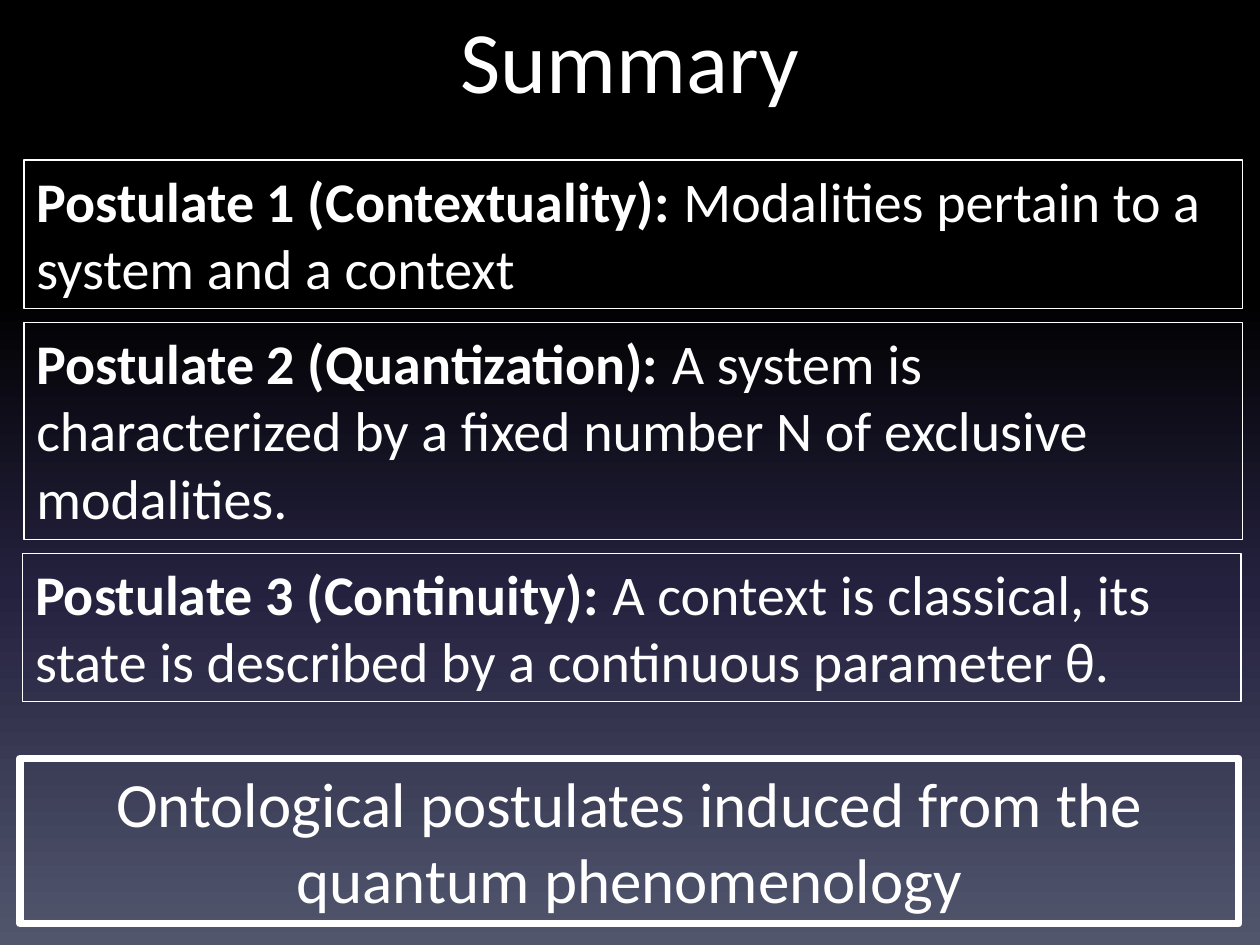
from lxml import etree
from pptx import Presentation
from pptx.dml.color import RGBColor
from pptx.enum.shapes import MSO_SHAPE
from pptx.enum.text import MSO_ANCHOR, MSO_AUTO_SIZE, PP_ALIGN
from pptx.oxml.ns import qn
from pptx.util import Inches, Pt

RECTANGLE = MSO_SHAPE.RECTANGLE
TOP, MIDDLE = MSO_ANCHOR.TOP, MSO_ANCHOR.MIDDLE
LEFT, CENTER = PP_ALIGN.LEFT, PP_ALIGN.CENTER
FIT_SHAPE, NO_FIT = MSO_AUTO_SIZE.SHAPE_TO_FIT_TEXT, MSO_AUTO_SIZE.NONE

WHITE = RGBColor(0xFF, 0xFF, 0xFF)
BLACK = RGBColor(0x00, 0x00, 0x00)
INDIGO = RGBColor(0x24, 0x21, 0x3E)
SLATE = RGBColor(0x51, 0x56, 0x6D)
FONT = "Calibri"

# Content
TITLE = "Summary"
POSTULATES = [  # left, top, height, name, statement
    (0.19, 1.27, 1.18, "Postulate 1 (Contextuality): ",
     "Modalities pertain to a system and a context"),
    (0.19, 2.56, 1.72, "Postulate 2 (Quantization): ",
     "A system is characterized by a fixed number N of exclusive modalities."),
    (0.18, 4.39, 1.18, "Postulate 3 (Continuity): ",
     "A context is classical, its state is described by a continuous parameter θ."),
]
CONCLUSION = "Ontological postulates induced from the quantum phenomenology"
BACKDROP = [(0, BLACK), (31, BLACK), (62, INDIGO), (100, SLATE)]
BOX_WIDTH = 9.67


def add_run(paragraph, text, size, bold=False):
    run = paragraph.add_run()
    run.text = text
    run.font.name = FONT
    run.font.size = Pt(size)
    run.font.bold = bold
    run.font.color.rgb = WHITE


def add_box(slide, left, top, height, line_width, runs, size, align):
    box = slide.shapes.add_shape(RECTANGLE, Inches(left), Inches(top),
                                 Inches(BOX_WIDTH), Inches(height))
    box.shadow.inherit = False
    box.fill.background()
    box.line.color.rgb = WHITE
    box.line.width = Pt(line_width)
    frame = box.text_frame
    frame.word_wrap = True
    frame.auto_size = FIT_SHAPE
    frame.vertical_anchor = TOP
    paragraph = frame.paragraphs[0]
    paragraph.alignment = align
    for text, bold in runs:
        add_run(paragraph, text, size, bold)


def paint_backdrop(slide):
    fill = slide.background.fill
    fill.gradient()
    fill.gradient_angle = 270  # counter-clockwise: runs from top to bottom
    stops = slide.element.find(".//" + qn("a:gsLst"))
    for stop in list(stops):
        stops.remove(stop)
    for percent, color in BACKDROP:
        stop = etree.SubElement(stops, qn("a:gs"), pos=str(percent * 1000))
        etree.SubElement(stop, qn("a:srgbClr"), val=str(color))


def main():
    deck = Presentation()
    deck.slide_width, deck.slide_height = Inches(10), Inches(7.5)
    slide = deck.slides.add_slide(deck.slide_layouts[5])
    paint_backdrop(slide)

    # Title
    title = slide.shapes.title
    title.left, title.top = Inches(0.5), Inches(0)
    title.width, title.height = Inches(9), Inches(1.25)
    title.text_frame.auto_size = NO_FIT
    title.text_frame.vertical_anchor = TOP
    heading = title.text_frame.paragraphs[0]
    heading.alignment = CENTER
    add_run(heading, TITLE, 50)

    # Postulates
    for left, top, height, name, statement in POSTULATES:
        add_box(slide, left, top, height, 0.75,
                [(name, True), (statement, False)], 32, LEFT)

    # Conclusion
    add_box(slide, 0.16, 6.02, 1.31, 4.5, [(CONCLUSION, False)], 36, CENTER)

    deck.save("out.pptx")


if __name__ == "__main__":
    main()
